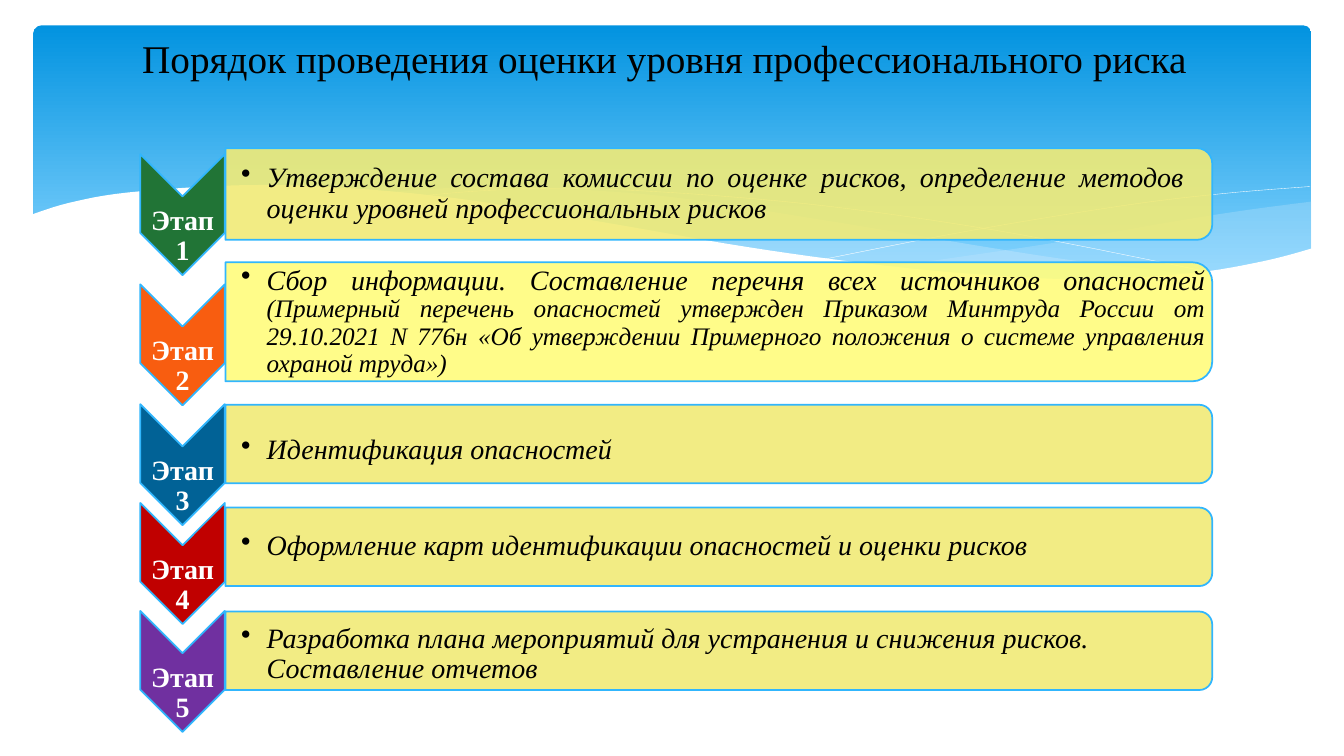
"""Builds a slide with the five stages of occupational risk assessment."""
from lxml import etree
from pptx import Presentation, util as u
from pptx.dml.color import RGBColor
from pptx.enum import shapes, text
from pptx.oxml.ns import qn

COLOURS = {
    "sky_top": "0293E0", "sky_bottom": "83D3FE", "wave": "C6E7FC",
    "white": "FFFFFF", "black": "000000", "edge": "31B6FD",
    "bar": "F1EB77", "bright_bar": "FFFC7D", "green": "217436",
    "orange": "F85D10", "blue": "016296", "red": "C00000", "purple": "7030A0",
}
FACE = "Times New Roman"
TITLE_FONT = {"name": FACE, "size": u.Pt(28), "bold": False}
LABEL_FONT = {"name": FACE, "size": u.Pt(20), "bold": True}
STEP_FONT = {"name": FACE, "size": u.Pt(20), "italic": True}
NOTE_FONT = {**STEP_FONT, "size": u.Pt(18)}
LEFT, JUSTIFY = text.PP_ALIGN.LEFT, text.PP_ALIGN.JUSTIFY
CHEVRON_X, CHEVRON_LENGTH, CHEVRON_WIDTH = 4.6, 3.05, 2.13
BAR_LEFT, BAR_LENGTH = 5.68, 24.87

WAVE_RIGHT_TOP = [(33.05, 5.08), (31.17, 5.33), (29.13, 5.66), (26.37, 6.15), (22.4, 6.73)]
WAVE_RIGHT_BOTTOM = [(22.4, 6.73), (24.33, 6.91), (27.2, 7.06), (29.54, 6.96),
                     (31.45, 6.68), (33.05, 6.27)]
WAVE_LONG_TOP = [(9.7, 4.85), (12.24, 4.7), (14.96, 4.8), (17.42, 5.03), (21.31, 5.64),
                 (25.12, 6.27), (27.33, 6.6), (30.23, 6.93)]
WAVE_LONG_BOTTOM = [(30.23, 6.93), (27.69, 7.06), (24.92, 6.99), (22.02, 6.71),
                    (19.18, 6.3), (15.21, 5.64), (12.27, 5.16), (9.7, 4.85)]
FALLING_LINE = [(10.46, 4.95), (12.29, 4.8), (14.66, 4.75), (18.03, 4.93),
                (21.54, 5.28), (25.76, 5.92), (30.73, 6.91)]
RISING_LINE = [(20.78, 6.53), (24.41, 5.82), (28.32, 5.18), (30.81, 4.88), (33.02, 4.7)]
PAGE_EDGE = [(0.79, 5.41), (1.75, 5.11), (3.23, 4.85), (5.97, 4.67), (8.46, 4.72),
             (11.51, 5), (15.14, 5.59), (18.8, 6.22), (21.92, 6.65), (24.61, 6.91),
             (27.38, 7.04), (30.05, 6.88), (31.85, 6.58), (33.1, 6.25)]

# chevron colour, chevron centre, bar colour, bar centre, bar height,
# text shift, right inset, alignment, text pieces
STAGES = [
    ("green", 5.41, "bar", 4.89, 2.31, 0, 0.57, JUSTIFY,
     [("Утверждение состава комиссии по оценке рисков, определение методов "
       "оценки уровней профессиональных рисков", STEP_FONT)]),
    ("orange", 8.69, "bright_bar", 8.11, 3, 0, 0.03, JUSTIFY,
     [("Сбор информации. Составление перечня всех источников опасностей ", STEP_FONT),
      ("(Примерный перечень опасностей утвержден Приказом Минтруда России от "
       "29.10.2021 N 776н «Об утверждении Примерного положения о системе управления "
       "охраной труда»)", NOTE_FONT)]),
    ("blue", 11.71, "bar", 11.19, 1.98, 0.17, 0.03, LEFT,
     [("Идентификация опасностей", STEP_FONT)]),
    ("red", 14.2, "bar", 13.78, 1.98, 0, 0.03, LEFT,
     [("Оформление карт идентификации опасностей и оценки рисков", STEP_FONT)]),
    ("purple", 16.92, "bar", 16.4, 1.98, 0.1, 2.5, LEFT,
     [("Разработка плана мероприятий для устранения и снижения рисков. "
       "Составление отчетов", STEP_FONT)]),
]


def rgb(name):
    """Return the named colour."""
    return RGBColor.from_string(COLOURS[name])


def apply_format(target, values):
    """Set each attribute in values on the target."""
    for name, value in values.items():
        setattr(target, name, value)


def paint(shape, fill=None, edge=None, width=1.25, opacity=100):
    """Give a shape its fill and outline, without a shadow."""
    shape.shadow.inherit = False
    if fill:
        shape.fill.solid()
        shape.fill.fore_color.rgb = rgb(fill)
        if opacity < 100:
            colour = shape.fill._xPr.find(".//" + qn("a:srgbClr"))
            etree.SubElement(colour, qn("a:alpha"), val=str(opacity * 1000))
    else:
        shape.fill.background()
    if edge:
        shape.line.color.rgb = rgb(edge)
        shape.line.width = u.Pt(width)
    else:
        shape.line.fill.background()


def smooth(knots, steps=6):
    """Return points on a Catmull-Rom curve through the knots."""
    padded = [knots[0], *knots, knots[-1]]
    curve = []
    for a, b, c, d in zip(padded, padded[1:], padded[2:], padded[3:]):
        for step in range(steps):
            t = step / steps
            curve.append(tuple(
                0.5 * (2 * q + (r - p) * t + (2 * p - 5 * q + 4 * r - s) * t ** 2
                       + (3 * q - p - 3 * r + s) * t ** 3)
                for p, q, r, s in zip(a, b, c, d)))
    return curve + [knots[-1]]


def add_outline(slide, points, closed=True, **look):
    """Draw a freeform through points given in centimetres."""
    start, *rest = [(u.Cm(x), u.Cm(y)) for x, y in points]
    builder = slide.shapes.build_freeform(*start)
    builder.add_line_segments(rest, close=closed)
    paint(builder.convert_to_shape(), **look)


def add_backdrop(slide):
    """Draw the blue panel and the waves along its lower edge."""
    panel = slide.shapes.add_shape(shapes.MSO_SHAPE.ROUNDED_RECTANGLE,
                                   u.Cm(0.84), u.Cm(0.64), u.Cm(32.21), u.Cm(6.86))
    paint(panel)
    panel.adjustments[0] = 0.03
    panel.fill.gradient()
    panel.fill.gradient_angle = 270
    for stop, name, position in zip(panel.fill.gradient_stops,
                                    ("sky_top", "sky_bottom"), (0, 0.9)):
        stop.color.rgb = rgb(name)
        stop.position = position
    add_outline(slide, smooth(WAVE_RIGHT_TOP) + smooth(WAVE_RIGHT_BOTTOM),
                fill="wave", opacity=29)
    add_outline(slide, smooth(WAVE_LONG_TOP) + smooth(WAVE_LONG_BOTTOM),
                fill="wave", opacity=40)
    for crest in (FALLING_LINE, RISING_LINE):
        add_outline(slide, smooth(crest), closed=False, edge="white", width=0.25)
    add_outline(slide, smooth(PAGE_EDGE) + [(33.1, 8.36), (0.79, 8.36)], fill="white")


def add_turned(slide, kind, centre_x, centre_y, length, breadth, **look):
    """Draw a preset shape turned a quarter clockwise about its centre."""
    shape = slide.shapes.add_shape(kind, u.Cm(centre_x - length / 2),
                                   u.Cm(centre_y - breadth / 2),
                                   u.Cm(length), u.Cm(breadth))
    shape.rotation = 90
    paint(shape, edge="edge", **look)


def write(frame, pieces, colour, align, bullet=False, spacing=0.9, left=0.03, right=0.03):
    """Write one paragraph of formatted pieces into a text frame."""
    apply_format(frame, {
        "word_wrap": True, "auto_size": text.MSO_AUTO_SIZE.NONE,
        "vertical_anchor": text.MSO_ANCHOR.MIDDLE,
        "margin_left": u.Cm(left), "margin_right": u.Cm(right),
        "margin_top": u.Cm(0.03), "margin_bottom": u.Cm(0.03)})
    paragraph = frame.paragraphs[0]
    apply_format(paragraph, {"alignment": align, "line_spacing": spacing})
    if bullet:
        properties = paragraph._p.get_or_add_pPr()
        properties.set("marL", str(u.Cm(0.64)))
        properties.set("indent", str(-u.Cm(0.64)))
        etree.SubElement(properties, qn("a:buChar"), char="•")
    for wording, values in pieces:
        run = paragraph.add_run()
        run.text = wording
        apply_format(run.font, values)
        run.font.color.rgb = rgb(colour)


def add_text(slide, x, centre_y, width, height, *content, **layout):
    """Place a text box centred on a height."""
    box = slide.shapes.add_textbox(u.Cm(x), u.Cm(centre_y - height / 2),
                                   u.Cm(width), u.Cm(height))
    write(box.text_frame, *content, **layout)


def add_stage(slide, number, stage):
    """Draw a numbered chevron and the bar that describes the stage."""
    colour, chevron_y, bar, bar_y, height, shift, right, align, pieces = stage
    add_turned(slide, shapes.MSO_SHAPE.CHEVRON, CHEVRON_X, chevron_y,
               CHEVRON_LENGTH, CHEVRON_WIDTH, fill=colour)
    add_text(slide, CHEVRON_X - 1, chevron_y + 0.55, 2, 1.6,
             [(f"Этап {number}", LABEL_FONT)], "white", text.PP_ALIGN.CENTER)
    add_turned(slide, shapes.MSO_SHAPE.ROUND_2_SAME_RECTANGLE, BAR_LEFT + BAR_LENGTH / 2,
               bar_y, height, BAR_LENGTH, fill=bar, opacity=90)
    add_text(slide, BAR_LEFT, bar_y + shift, 24.73, height, pieces, "black", align,
             bullet=True, left=0.4, right=right)


def add_title(slide):
    """Place the title in front of the backdrop."""
    title = slide.shapes.title
    apply_format(title, {"left": u.Cm(2.34), "top": u.Cm(0.74),
                         "width": u.Cm(28.8), "height": u.Cm(1.45)})
    write(title.text_frame,
          [("Порядок проведения оценки уровня профессионального риска", TITLE_FONT)],
          "black", text.PP_ALIGN.CENTER, spacing=1.0)
    slide.shapes._spTree.append(title._element)


def main():
    """Build and save the slide."""
    deck = Presentation()
    deck.slide_width, deck.slide_height = u.Cm(33.87), u.Cm(19.05)
    slide = deck.slides.add_slide(deck.slide_layouts[5])
    add_backdrop(slide)
    for number, stage in enumerate(STAGES, 1):
        add_stage(slide, number, stage)
    add_title(slide)
    deck.save("out.pptx")


if __name__ == "__main__":
    main()
